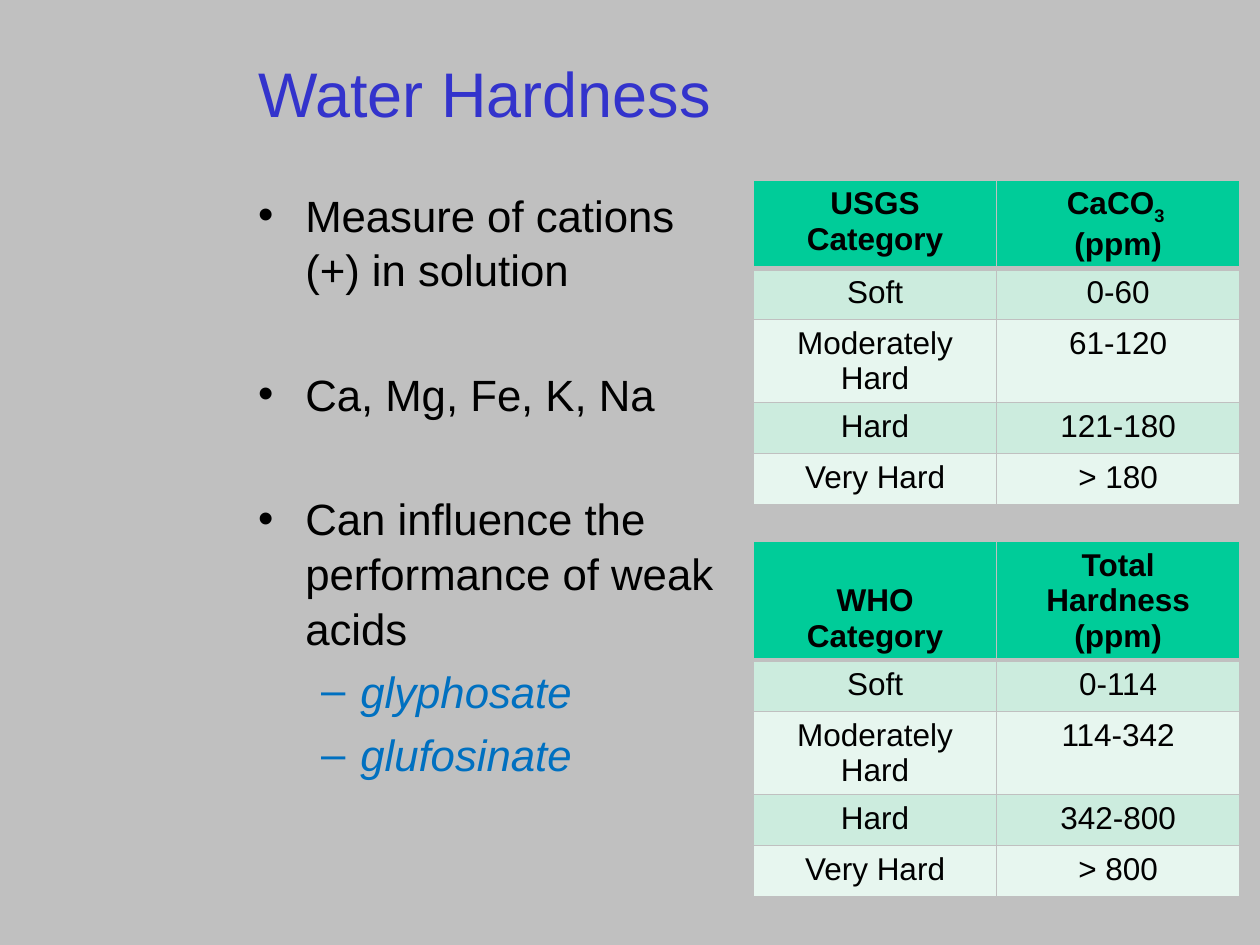
from lxml.etree import SubElement
from pptx import Presentation
from pptx.dml.color import RGBColor
from pptx.enum.text import MSO_ANCHOR, MSO_AUTO_SIZE, PP_ALIGN
from pptx.oxml.ns import qn
from pptx.util import Cm, Pt

COLORS = {
    "background": "C0C0C0",
    "title": "3333CC",
    "text": "000000",
    "example": "0070C0",
    "header": "00CC99",
    "odd_row": "CCECDE",
    "even_row": "E7F6EF",
}


class SlideBuilder:
    font_name = "Arial"
    title_size = 36
    body_size = 25
    table_size = 18

    def __init__(self, deck):
        self.slide = deck.slides.add_slide(deck.slide_layouts[1])
        fill = self.slide.background.fill
        fill.solid()
        fill.fore_color.rgb = self.color("background")

    def color(self, name):
        return RGBColor.from_string(COLORS[name])

    def style(self, paragraph, size, color="text", bold=False, italic=False):
        font = paragraph.font
        font.name, font.size = self.font_name, Pt(size)
        font.bold, font.italic = bold, italic
        font.color.rgb = self.color(color)

    def place(self, shape, left, top, width, height):
        shape.left, shape.top = Cm(left), Cm(top)
        shape.width, shape.height = Cm(width), Cm(height)

    def title(self, text, *box):
        heading = self.slide.shapes.title
        self.place(heading, *box)
        frame = heading.text_frame
        frame.auto_size = MSO_AUTO_SIZE.NONE
        frame.vertical_anchor = MSO_ANCHOR.MIDDLE
        frame.text = text
        frame.paragraphs[0].alignment = PP_ALIGN.LEFT
        self.style(frame.paragraphs[0], self.title_size, "title")

    def bullets(self, items, *box):
        body = self.slide.placeholders[1]
        self.place(body, *box)
        frame = body.text_frame
        frame.auto_size = MSO_AUTO_SIZE.NONE
        for index, (level, text) in enumerate(items):
            paragraph = frame.add_paragraph() if index else frame.paragraphs[0]
            paragraph.text = text
            paragraph.level = level
            margin, hanging, mark = ((0.95, 0.95, "•"), (2.06, 0.79, "–"))[level]
            properties = paragraph._p.get_or_add_pPr()
            properties.set("marL", str(Cm(margin)))
            properties.set("indent", str(-Cm(hanging)))
            SubElement(properties, qn("a:buChar")).set("char", mark)
            paragraph.line_spacing = 1.04
            paragraph.space_before = Pt((40, 5)[level] if index else 0)
            self.style(paragraph, self.body_size,
                       "example" if level else "text", italic=level == 1)

    def borders(self, cell, top, bottom):
        properties = cell._tc.get_or_add_tcPr()
        for side, width in (("L", 1), ("R", 1), ("T", top), ("B", bottom)):
            line = SubElement(properties, qn(f"a:ln{side}"), w=str(Pt(width)))
            fill = SubElement(line, qn("a:solidFill"))
            SubElement(fill, qn("a:srgbClr"), val=COLORS["background"])

    def cell(self, cell, lines, row):
        self.borders(cell, 3 if row == 1 else 1, 3 if row == 0 else 1)
        cell.fill.solid()
        band = "header" if row == 0 else "odd_row" if row % 2 else "even_row"
        cell.fill.fore_color.rgb = self.color(band)
        frame = cell.text_frame
        for index, line in enumerate(lines.split("\n")):
            paragraph = frame.add_paragraph() if index else frame.paragraphs[0]
            base, _, subscript = line.partition("_")
            paragraph.add_run().text = base
            if subscript:
                run = paragraph.add_run()
                run.text = subscript
                run._r.get_or_add_rPr().set("baseline", "-25000")
            paragraph.alignment = PP_ALIGN.CENTER
            self.style(paragraph, self.table_size, bold=row == 0)

    def table(self, rows, header_anchor, left, top, width, height):
        frame = self.slide.shapes.add_table(
            len(rows), len(rows[0]), Cm(left), Cm(top), Cm(width), Cm(height))
        grid = frame.table
        for row, texts in enumerate(rows):
            grid.rows[row].height = Cm(1.03)
            for column, text in enumerate(texts):
                self.cell(grid.cell(row, column), text, row)
        grid.cell(0, 0).vertical_anchor = header_anchor
        frame.height = Cm(height)


def hardness_rows(header, ranges):
    categories = ("Soft", "Moderately Hard", "Hard", "Very Hard")
    return [header, *zip(categories, ranges)]


def main():
    deck = Presentation()
    deck.slide_width, deck.slide_height = Cm(25.4), Cm(19.05)
    builder = SlideBuilder(deck)
    builder.title("Water Hardness", 4.95, 0.28, 20.24, 3.18)
    builder.bullets([
        (0, "Measure of cations (+) in solution"),
        (0, "Ca, Mg, Fe, K, Na"),
        (0, "Can influence the performance of weak acids"),
        (1, "glyphosate"),
        (1, "glufosinate"),
    ], 4.95, 3.63, 9.8, 14.15)
    usgs = hardness_rows(("USGS Category", "CaCO_3 \n(ppm)"),
                         ("0-60", "61-120", "121-180", "> 180"))
    who = hardness_rows(("WHO Category", "Total Hardness\n(ppm)"),
                        ("0-114", "114-342", "342-800", "> 800"))
    builder.table(usgs, MSO_ANCHOR.TOP, 15.19, 3.63, 9.8, 6.65)
    builder.table(who, MSO_ANCHOR.BOTTOM, 15.19, 10.92, 9.8, 7.42)
    deck.save("out.pptx")


if __name__ == "__main__":
    main()
